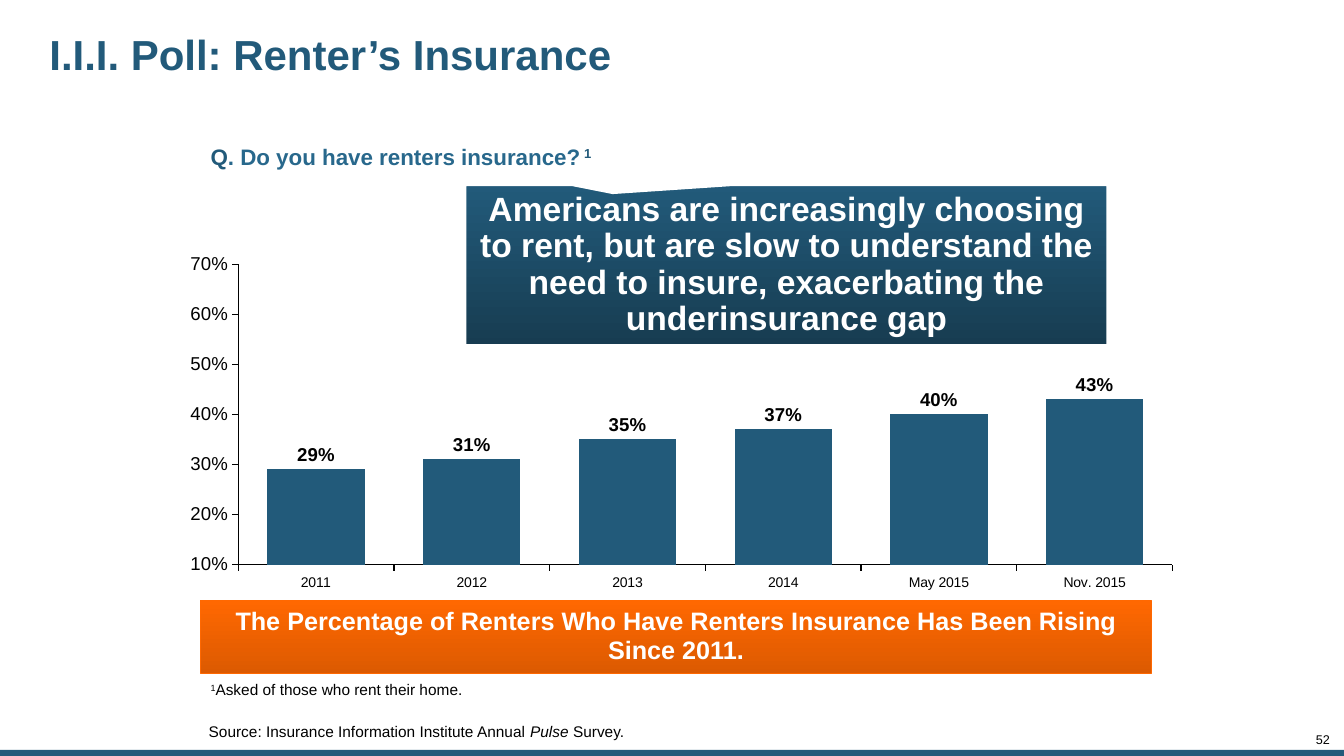
from dataclasses import dataclass

from lxml import etree
from pptx import Presentation
from pptx.chart.data import CategoryChartData
from pptx.dml.color import RGBColor
from pptx.enum.chart import XL_CHART_TYPE, XL_LABEL_POSITION, XL_TICK_MARK
from pptx.enum.shapes import MSO_SHAPE
from pptx.enum.text import MSO_ANCHOR, PP_ALIGN
from pptx.oxml.ns import qn
from pptx.util import Inches, Pt

RECT, CALLOUT = MSO_SHAPE.RECTANGLE, MSO_SHAPE.RECTANGULAR_CALLOUT
LEFT, CENTER, RIGHT = PP_ALIGN.LEFT, PP_ALIGN.CENTER, PP_ALIGN.RIGHT
TOP, MIDDLE, BOTTOM = MSO_ANCHOR.TOP, MSO_ANCHOR.MIDDLE, MSO_ANCHOR.BOTTOM
COLUMNS = XL_CHART_TYPE.COLUMN_CLUSTERED
TICK_OUT, TICK_NONE = XL_TICK_MARK.OUTSIDE, XL_TICK_MARK.NONE
OUTSIDE_END = XL_LABEL_POSITION.OUTSIDE_END


@dataclass(frozen=True)
class Theme:
    font: str = "Arial"
    navy: str = "225A7A"
    deep_navy: str = "173C51"
    blue: str = "28688C"
    orange: str = "FF6801"
    burnt: str = "DC5A01"
    white: str = "FFFFFF"
    black: str = "000000"
    title: float = 30
    callout: float = 24
    banner: float = 18
    question: float = 16
    chart: float = 13.3
    note: float = 11
    category: float = 10
    number: float = 9


def assign(target, values):
    for name, value in values.items():
        setattr(target, name, value)


class SlideBuilder:
    """Draws on one slide; boxes are (left, top, width, height) in percent of the slide."""

    def __init__(self, prs, theme):
        self.prs, self.theme = prs, theme
        self.slide = prs.slides.add_slide(prs.slide_layouts[5])

    def place(self, box):
        sides = (self.prs.slide_width, self.prs.slide_height) * 2
        return [round(share * side / 100) for share, side in zip(box, sides)]

    def style_font(self, font, size, color, bold=False):
        assign(font, dict(name=self.theme.font, size=Pt(size), bold=bold))
        font.color.rgb = RGBColor.from_string(color)

    def set_text(self, sp, runs, size, color, bold=False, align=LEFT, anchor=TOP,
                 spacing=0.85, insets=(0.1, 0.05, 0.1, 0.05), wrap=True):
        """Fill a shape with one paragraph of (text, overrides) runs."""
        tf = sp.text_frame
        margins = ("margin_left", "margin_top", "margin_right", "margin_bottom")
        assign(tf, dict(zip(margins, map(Inches, insets))))
        assign(tf, dict(word_wrap=wrap, vertical_anchor=anchor))
        p = tf.paragraphs[0]
        assign(p, dict(alignment=align, line_spacing=spacing, space_before=Pt(0)))
        for text, extra in runs:
            r = p.add_run()
            r.text = text
            self.style_font(r.font, size, extra.get("color", color), bold)
            r.font.italic = extra.get("italic", False)
            if extra.get("superscript"):
                r.font._element.set("baseline", "30000")

    def title(self, box, text):
        sp = self.slide.shapes.title
        assign(sp, dict(zip(("left", "top", "width", "height"), self.place(box))))
        self.set_text(sp, [(text, {})], self.theme.title, self.theme.navy, bold=True,
                      anchor=MIDDLE, spacing=0.9, insets=(0.05,) * 4)

    def text(self, box, runs, size, color=None, **form):
        sp = self.slide.shapes.add_textbox(*self.place(box))
        self.set_text(sp, runs, size, color or self.theme.black, **form)

    def panel(self, box, colors, kind=RECT, line=None, adjust=()):
        """Add a shape with a plain fill, or a top-to-bottom gradient for two colours."""
        sp = self.slide.shapes.add_shape(kind, *self.place(box))
        sp.shadow.inherit = False
        for i, value in enumerate(adjust):
            sp.adjustments[i] = value
        if len(colors) == 1:
            sp.fill.solid()
            sp.fill.fore_color.rgb = RGBColor.from_string(colors[0])
        else:
            sp.fill.gradient()
            sp.fill.gradient_angle = 270
            for stop, color in zip(sp.fill.gradient_stops, colors):
                stop.color.rgb = RGBColor.from_string(color)
        if line:
            color, width = line
            sp.line.color.rgb = RGBColor.from_string(color)
            sp.line.width = Pt(width)
        else:
            sp.line.fill.background()
        return sp

    def column_chart(self, box, values, plot_box):
        th = self.theme
        data = CategoryChartData(number_format="0%")
        data.categories = list(values)
        data.add_series("Series 1", list(values.values()))
        chart = self.slide.shapes.add_chart(COLUMNS, *self.place(box), data).chart
        assign(chart, dict(has_legend=False, has_title=False))
        self.style_font(chart.font, th.chart, th.black)

        axes = ((chart.category_axis, th.category, 0.95), (chart.value_axis, th.chart, 0.25))
        for axis, size, width in axes:
            assign(axis, dict(has_major_gridlines=False, major_tick_mark=TICK_OUT,
                              minor_tick_mark=TICK_NONE))
            self.style_font(axis.tick_labels.font, size, th.black)
            axis.format.line.color.rgb = RGBColor.from_string(th.black)
            axis.format.line.width = Pt(width)
        assign(chart.value_axis, dict(minimum_scale=0.1, maximum_scale=0.7, major_unit=0.1))
        assign(chart.value_axis.tick_labels,
               dict(number_format="0%", number_format_is_linked=False))

        plot = chart.plots[0]
        assign(plot, dict(gap_width=60, vary_by_categories=False, has_data_labels=True))
        assign(plot.data_labels, dict(show_value=True, number_format="0%",
                                      number_format_is_linked=False, position=OUTSIDE_END))
        self.style_font(plot.data_labels.font, th.chart, th.black, bold=True)
        fill = plot.series[0].format.fill
        fill.solid()
        fill.fore_color.rgb = RGBColor.from_string(th.navy)
        self.fix_plot_area(chart, plot_box)

    def fix_plot_area(self, chart, plot_box):
        """Pin the inner plot area, given in percent of the chart."""
        area = chart._chartSpace.chart.plotArea
        for old in area.findall(qn("c:layout")):
            area.remove(old)
        layout = etree.Element(qn("c:layout"))
        area.insert(0, layout)
        manual = etree.SubElement(layout, qn("c:manualLayout"))
        settings = [("layoutTarget", "inner"), ("xMode", "edge"), ("yMode", "edge")]
        settings += [(name, str(share / 100)) for name, share in zip("xywh", plot_box)]
        for name, value in settings:
            etree.SubElement(manual, qn(f"c:{name}")).set("val", value)


def main():
    prs = Presentation()
    prs.slide_width, prs.slide_height = Inches(13.33), Inches(7.5)
    th = Theme()
    s = SlideBuilder(prs, th)

    s.panel((0, 99.2, 100, 0.8), [th.navy])
    s.text((94.07, 97.07, 4.88, 1.73), [("52", {})], th.number, align=RIGHT, insets=(0,) * 4)
    s.title((3.3, 1.33, 80.95, 12.53), "I.I.I. Poll: Renter’s Insurance")
    s.text((12.53, 95.87, 70.82, 4.13),
           [("Source: Insurance Information Institute Annual ", {}),
            ("Pulse", {"italic": True}), (" Survey.", {})],
           th.note, anchor=BOTTOM, insets=(0.4, 0, 0, 0.15))

    s.column_chart((13.35, 33.47, 74.19, 53.47),
                   {"2011": 0.29, "2012": 0.31, "2013": 0.35, "2014": 0.37,
                    "May 2015": 0.4, "Nov. 2015": 0.43},
                   plot_box=(5.9, 2.8, 93.7, 74.3))

    banner = s.panel((14.93, 79.47, 70.74, 9.6), [th.orange, th.burnt], line=(th.orange, 1))
    s.set_text(banner, [("The Percentage of Renters Who Have Renters Insurance "
                         "Has Been Rising Since 2011.", {})],
               th.banner, th.white, bold=True, align=CENTER, anchor=MIDDLE, spacing=0.95,
               insets=(0.1, 0.05, 0.1, 0.07))

    s.text((14.93, 18.27, 30.31, 12.13),
           [("Q", {}), (". Do you have renters insurance?", {"color": th.blue}),
            (" 1", {"superscript": True})],
           th.question, th.navy, bold=True, spacing=1.0, wrap=False)
    s.text((14.93, 89.73, 37.51, 3.47),
           [("1", {"superscript": True}), ("Asked of those who rent their home.", {})], th.note)

    callout = s.panel((34.58, 24.4, 47.86, 21.33), [th.navy, th.deep_navy], CALLOUT,
                      line=(th.white, 2.25), adjust=(-0.27, -0.45))
    s.set_text(callout, [("Americans are increasingly choosing to rent, but are slow to "
                          "understand the need to insure, exacerbating the "
                          "underinsurance gap", {})],
               th.callout, th.white, bold=True, align=CENTER, anchor=MIDDLE, spacing=0.9,
               insets=(0.1,) * 4)

    prs.save("out.pptx")


if __name__ == "__main__":
    main()
